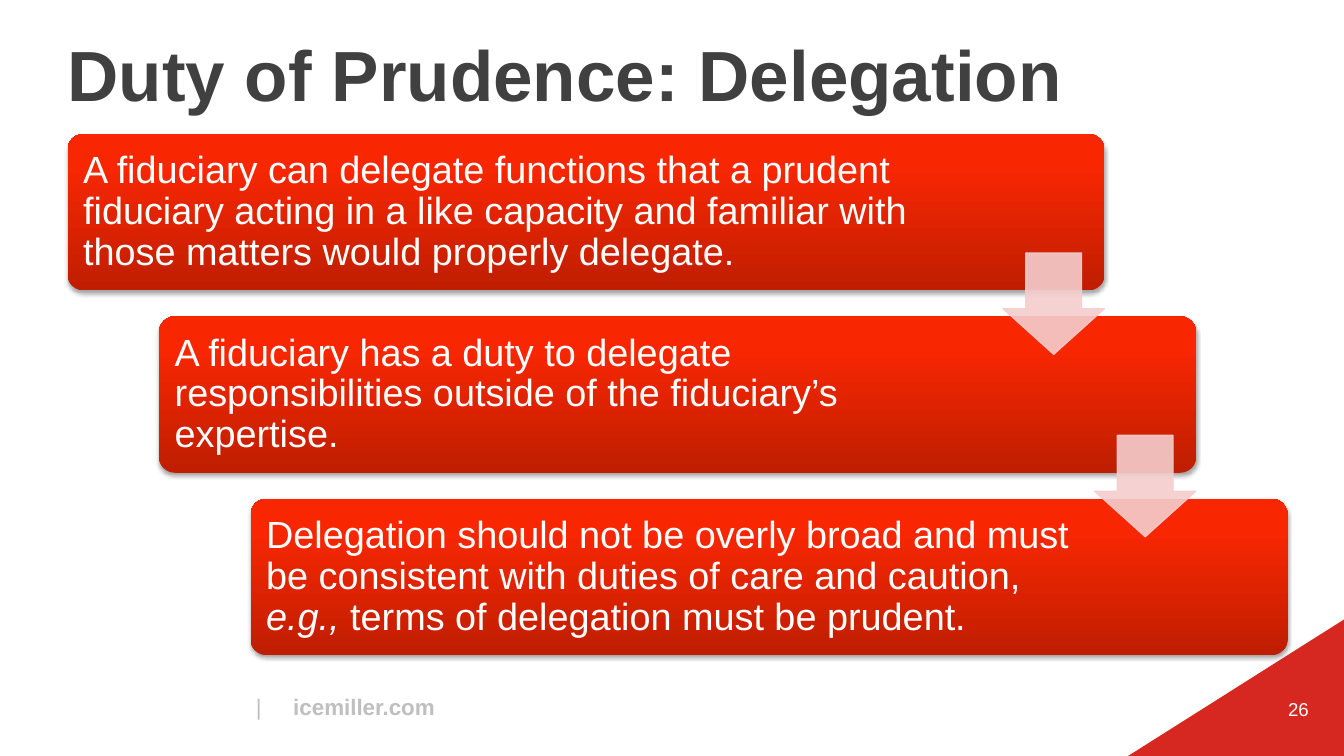
from lxml import etree
from pptx import Presentation
from pptx.dml.color import RGBColor
from pptx.enum.shapes import MSO_SHAPE
from pptx.enum.text import MSO_ANCHOR, PP_ALIGN
from pptx.oxml.ns import qn
from pptx.util import Inches, Pt

ROUNDED, DOWN_ARROW = MSO_SHAPE.ROUNDED_RECTANGLE, MSO_SHAPE.DOWN_ARROW
TRIANGLE = MSO_SHAPE.RIGHT_TRIANGLE
TOP, MIDDLE, BOTTOM = MSO_ANCHOR.TOP, MSO_ANCHOR.MIDDLE, MSO_ANCHOR.BOTTOM
RIGHT = PP_ALIGN.RIGHT

WHITE = RGBColor(0xFF, 0xFF, 0xFF)
BLACK = RGBColor(0x00, 0x00, 0x00)
DARK_GREY = RGBColor(0x40, 0x40, 0x40)
LIGHT_GREY = RGBColor(0xBF, 0xBF, 0xBF)
CORNER_RED = RGBColor(0xD6, 0x27, 0x20)
PINK = RGBColor(0xF4, 0xCE, 0xCD)
CARD_STOPS = [
    (0, RGBColor(0xBF, 0x1E, 0x01)),
    (80, RGBColor(0xF8, 0x27, 0x02)),
    (100, RGBColor(0xFB, 0x26, 0x00)),
]

# Staircase: every measure is a share of its area
PAGE_W, PAGE_H = 13.33, 7.5
STAIRS_X, STAIRS_Y, STAIRS_W, STAIRS_H = 0.67, 1.33, 12.1, 5.17
CARD_W, CARD_H = 0.85 * STAIRS_W, 0.3 * STAIRS_H
STEP_X, STEP_Y = 0.075 * STAIRS_W, 0.35 * STAIRS_H
ARROW = 0.65 * CARD_H
LABEL_GAP = 0.045

# Label width, then the text as (words, italic) pieces
STEPS = [
    (8.62, [("A fiduciary can delegate functions that a prudent fiduciary acting "
             "in a like capacity and familiar with those matters would properly "
             "delegate.", False)]),
    (8.29, [("A fiduciary has a duty to delegate responsibilities outside of the "
             "fiduciary’s expertise.", False)]),
    (8.29, [("Delegation should not be overly broad and must be consistent with "
             "duties of care and caution, ", False),
            ("e.g.,", True),
            (" terms of delegation must be prudent.", False)]),
]


def add_color(parent, color, alpha=None):
    node = etree.SubElement(parent, qn("a:srgbClr"), val=str(color))
    if alpha is not None:
        etree.SubElement(node, qn("a:alpha"), val=str(alpha * 1000))


def add_shape(page, kind, left, top, width, height, adjustments=()):
    shape = page.shapes.add_shape(
        kind, Inches(left), Inches(top), Inches(width), Inches(height))
    shape.shadow.inherit = False
    shape.line.fill.background()
    for index, value in enumerate(adjustments):
        shape.adjustments[index] = value
    return shape


def add_text(page, left, top, width, height, size, color,
             anchor=TOP, inset=None, bold=None):
    """Add an empty text box and return its formatted paragraph."""
    box = page.shapes.add_textbox(
        Inches(left), Inches(top), Inches(width), Inches(height))
    frame = box.text_frame
    frame.word_wrap = True
    frame.vertical_anchor = anchor
    if inset is not None:
        frame.margin_left = frame.margin_right = Inches(inset)
        frame.margin_top = frame.margin_bottom = Inches(inset)
    para = frame.paragraphs[0]
    para.font.name = "Arial"
    para.font.size = Pt(size)
    para.font.color.rgb = color
    para.font.bold = bold
    return para


def add_card(page, left, top):
    card = add_shape(page, ROUNDED, left, top, CARD_W, CARD_H, [0.1])
    card.fill.gradient()
    card.fill.gradient_angle = 90
    properties = card._element.spPr
    stops = properties.find(qn("a:gradFill")).find(qn("a:gsLst"))
    stops.clear()
    for position, color in CARD_STOPS:
        stop = etree.SubElement(stops, qn("a:gs"), pos=str(position * 1000))
        add_color(stop, color)
    shadow = etree.SubElement(
        properties.find(qn("a:effectLst")), qn("a:outerShdw"),
        blurRad=str(Pt(3.1)), dist=str(Pt(1.8)), dir="5400000", rotWithShape="0")
    add_color(shadow, BLACK, 35)


def add_label(page, left, top, width, pieces):
    para = add_text(page, left + LABEL_GAP, top + LABEL_GAP, width,
                    CARD_H - 2 * LABEL_GAP, 27, WHITE, MIDDLE, 0.11)
    para.line_spacing = 0.9
    for words, italic in pieces:
        span = para.add_run()
        span.text = words
        if italic:
            span.font.italic = True


def add_arrow(page, card_left, card_top):
    arrow = add_shape(page, DOWN_ARROW, card_left + CARD_W - ARROW,
                      card_top + 0.76 * CARD_H, ARROW, ARROW, [0.55, 0.45])
    arrow.fill.solid()
    arrow.fill.fore_color.rgb = PINK
    arrow.line.color.rgb = PINK
    arrow.line.width = Pt(0.75)
    for color in arrow._element.spPr.iter(qn("a:srgbClr")):
        etree.SubElement(color, qn("a:alpha"), val="90000")


def add_footer(page):
    para = add_text(page, 2.44, 6.83, 2.2, 0.37, 16, LIGHT_GREY)
    tabs = etree.Element(qn("a:tabLst"))
    etree.SubElement(tabs, qn("a:tab"), pos=str(Inches(0.37)), algn="l")
    para._p.get_or_add_pPr().insert(0, tabs)
    para.add_run().text = "|\t"
    address = para.add_run()
    address.text = "icemiller.com"
    address.font.bold = True

    # Red corner with the page number
    corner = add_shape(page, TRIANGLE, 11.35, 5.61, 1.78, 2.45)
    corner.rotation = 273.7
    corner.fill.solid()
    corner.fill.fore_color.rgb = CORNER_RED
    number = add_text(page, 12.33, 6.83, 0.75, 0.4, 13.3, WHITE, MIDDLE)
    number.alignment = RIGHT
    number.add_run().text = "26"


def main():
    deck = Presentation()
    deck.slide_width, deck.slide_height = Inches(PAGE_W), Inches(PAGE_H)
    page = deck.slides.add_slide(deck.slide_layouts[6])

    add_footer(page)

    # Title
    title = add_text(page, STAIRS_X, 0.25, 12, 0.9, 50.7, DARK_GREY,
                     BOTTOM, 0, True)
    title.line_spacing = Pt(45.3)
    title.add_run().text = "Duty of Prudence: Delegation"

    # Cards first, so that the arrows lie on top
    corners = [(STAIRS_X + index * STEP_X, STAIRS_Y + index * STEP_Y)
               for index in range(len(STEPS))]
    for (left, top), (width, pieces) in zip(corners, STEPS):
        add_card(page, left, top)
        add_label(page, left, top, width, pieces)
    for left, top in corners[:-1]:
        add_arrow(page, left, top)

    deck.save("out.pptx")


if __name__ == "__main__":
    main()
